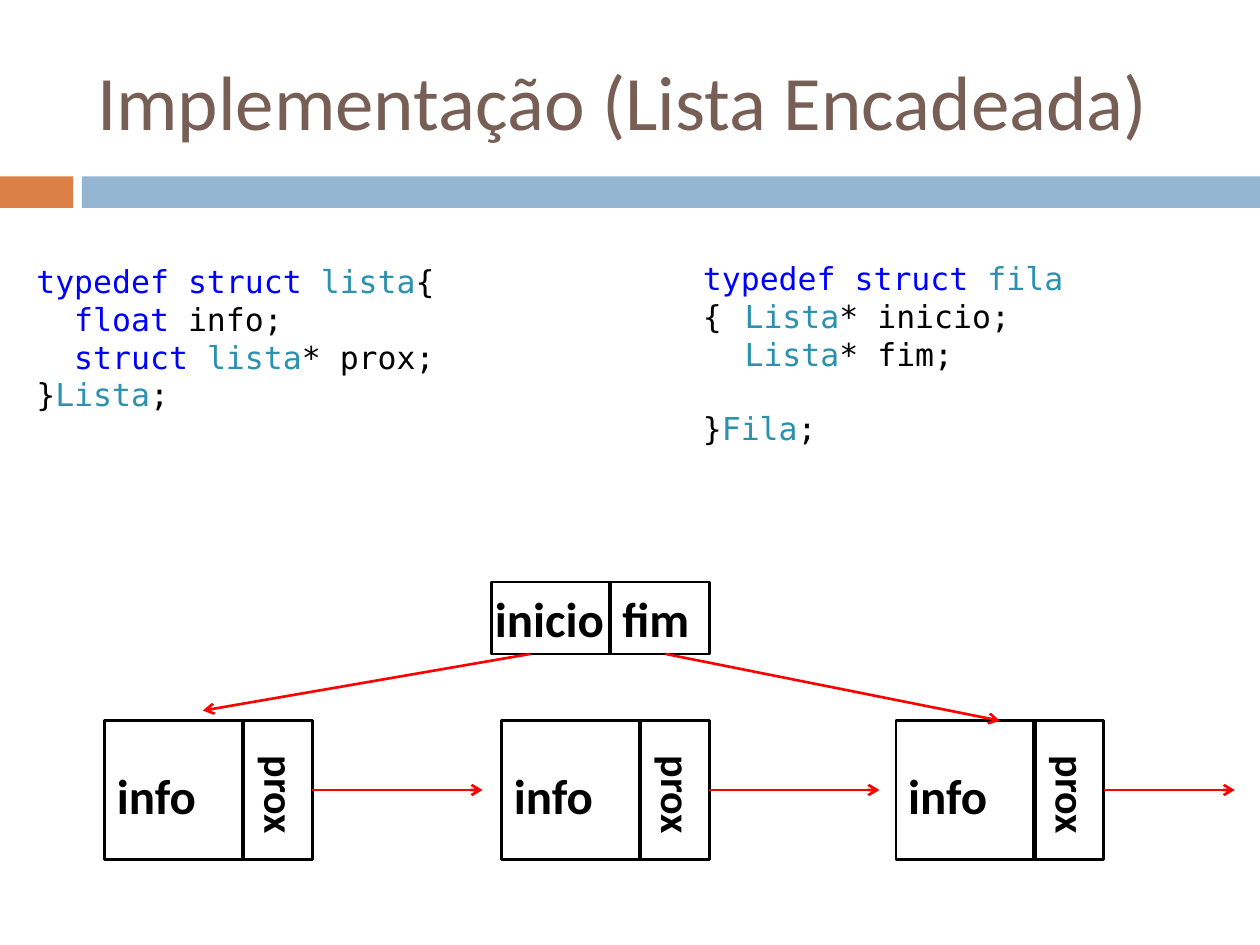
from pptx import Presentation
from pptx.dml.color import RGBColor
from pptx.enum.shapes import MSO_CONNECTOR, MSO_SHAPE
from pptx.enum.text import MSO_ANCHOR, MSO_AUTO_SIZE, PP_ALIGN
from pptx.oxml.ns import qn
from pptx.util import Inches, Pt
from lxml.etree import SubElement

THEME = {
    "title": "775F55", "accent": "DD8047", "band": "94B6D2",
    "ink": "000000", "keyword": "0000FF", "type": "2B91AF", "arrow": "FF0000",
    "font": "Calibri", "code_font": "DejaVu Sans Mono",
    "title_size": 44, "label_size": 28, "side_size": 24, "code_size": 18,
    "thin": 1.5, "thick": 2.5,
}

TITLE = "Implementação (Lista Encadeada)"
BARS = [(0, 0.58, "accent"), (0.65, 9.35, "band")]

# Each code block: position, space before the last line, lines of (text, colour)
CODE_BLOCKS = [
    ((0.19, 2.03, 5, 1.31), 0, [
        [("typedef struct ", "keyword"), ("lista", "type"), ("{", "ink")],
        [("  float ", "keyword"), ("info;", "ink")],
        [("  struct ", "keyword"), ("lista", "type"), ("* prox;", "ink")],
        [("}", "ink"), ("Lista", "type"), (";", "ink")],
    ]),
    ((5.48, 2.01, 3.18, 1.31), 42, [
        [("typedef struct ", "keyword"), ("fila", "type"), (" {", "ink")],
        [("}", "ink"), ("Fila", "type"), (";", "ink")],
    ]),
    ((5.51, 2.31, 4.29, 0.71), 0, [
        [("  Lista", "type"), ("* inicio;", "ink")],
        [("  Lista", "type"), ("* fim;", "ink")],
    ]),
]

NODE_TOP, NODE_WIDTH, NODE_HEIGHT, INFO_WIDTH = 5.72, 1.65, 1.1, 1.1
NODES = [(0.83, 3.83), (3.98, 6.98), (7.11, 9.8)]  # left edge, arrow tip
QUEUE_LEFT, QUEUE_TOP, QUEUE_WIDTH, QUEUE_HEIGHT = 3.9, 4.62, 1.73, 0.57
QUEUE_SPLIT = 4.84


def color(name):
    return RGBColor.from_string(THEME[name])


def add_span(para, text, size, tone, font="font", bold=False):
    span = para.add_run()
    span.text = text
    span.font.name = THEME[font]
    span.font.size = Pt(THEME[size])
    span.font.bold = bold
    span.font.color.rgb = color(tone)


def add_rect(page, place, fill=None):
    """Add a solid bar, or a black outline when no fill is given."""
    rect = page.shapes.add_shape(MSO_SHAPE.RECTANGLE, *map(Inches, place))
    rect.shadow.inherit = False
    if fill:
        rect.fill.solid()
        rect.fill.fore_color.rgb = color(fill)
        rect.line.fill.background()
    else:
        rect.fill.background()
        rect.line.color.rgb = color("ink")
        rect.line.width = Pt(THEME["thin"])
    return rect


def add_box(page, place):
    box = page.shapes.add_textbox(*map(Inches, place))
    box.text_frame.word_wrap = True
    return box


def add_label(page, text, place, size="label_size", rotation=0):
    box = add_box(page, place)
    box.rotation = rotation
    add_span(box.text_frame.paragraphs[0], text, size, "ink", bold=True)
    return box


def add_line(page, start, end, tone="ink", width="thick"):
    line = page.shapes.add_connector(
        MSO_CONNECTOR.STRAIGHT, *map(Inches, (*start, *end)))
    line.line.color.rgb = color(tone)
    line.line.width = Pt(THEME[width])
    SubElement(line._element.spPr, qn("a:effectLst"))
    return line


def add_arrow(page, start, end):
    arrow = add_line(page, start, end, "arrow", "thin")
    SubElement(arrow.line._get_or_add_ln(), qn("a:tailEnd"), type="arrow")
    return arrow


def add_title(page):
    title = page.shapes.title
    title.left, title.top, title.width, title.height = map(
        Inches, (0.67, 0.25, 8.92, 1.08))
    frame = title.text_frame
    frame.auto_size = MSO_AUTO_SIZE.NONE
    frame.vertical_anchor = MSO_ANCHOR.MIDDLE
    frame.paragraphs[0].alignment = PP_ALIGN.LEFT
    add_span(frame.paragraphs[0], TITLE, "title_size", "title")


def add_code(page, place, last_gap, lines):
    frame = add_box(page, place).text_frame
    for index, line in enumerate(lines):
        para = frame.paragraphs[0] if index == 0 else frame.add_paragraph()
        for text, tone in line:
            add_span(para, text, "code_size", tone, "code_font")
    if last_gap:
        para.space_before = Pt(last_gap)


def add_node(page, left, tip):
    """Add one list element with its info and prox cells and its arrow."""
    node = add_rect(page, (left, NODE_TOP, NODE_WIDTH, NODE_HEIGHT))
    split, middle = left + INFO_WIDTH, NODE_TOP + NODE_HEIGHT / 2
    add_line(page, (split, NODE_TOP), (split, NODE_TOP + NODE_HEIGHT))
    add_label(page, "info", (left, 6.03, 1.26, 0.57))
    add_label(page, "prox", (left + 0.98, 6.07, 0.84, 0.5), "side_size", 90)
    arrow = add_arrow(page, (left + NODE_WIDTH, middle), (tip, middle))
    arrow.begin_connect(node, 3)
    return node


def add_queue(page, last_node):
    """Add the queue header, pointing at the first and last elements."""
    bottom = QUEUE_TOP + QUEUE_HEIGHT
    add_rect(page, (QUEUE_LEFT, QUEUE_TOP, QUEUE_WIDTH, QUEUE_HEIGHT))
    add_label(page, "inicio", (3.83, QUEUE_TOP, 1.23, QUEUE_HEIGHT))
    add_line(page, (QUEUE_SPLIT, QUEUE_TOP), (QUEUE_SPLIT, bottom))
    end_label = add_label(
        page, "fim", (QUEUE_SPLIT, QUEUE_TOP, 0.88, QUEUE_HEIGHT))
    add_arrow(page, (4.21, bottom), (1.61, 5.64))
    last_arrow = add_arrow(page, (5.28, bottom), (7.94, NODE_TOP))
    last_arrow.begin_connect(end_label, 2)
    last_arrow.end_connect(last_node, 0)


def main():
    deck = Presentation()
    deck.slide_width, deck.slide_height = Inches(10), Inches(7.5)
    page = deck.slides.add_slide(deck.slide_layouts[5])
    for left, width, fill in BARS:
        add_rect(page, (left, 1.4, width, 0.25), fill)
    add_title(page)
    nodes = [add_node(page, left, tip) for left, tip in NODES]
    add_queue(page, nodes[-1])
    for place, last_gap, lines in CODE_BLOCKS:
        add_code(page, place, last_gap, lines)
    deck.save("out.pptx")


if __name__ == "__main__":
    main()
